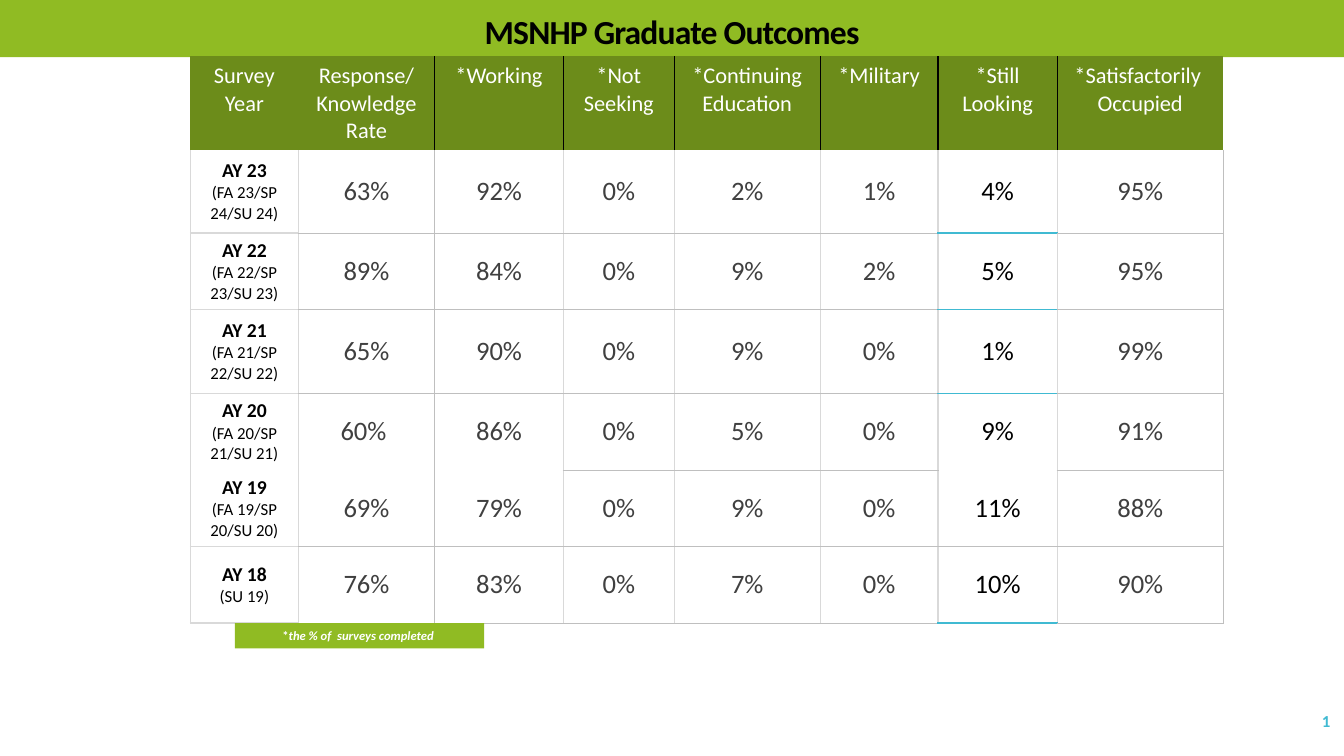
from lxml import etree
from pptx import Presentation
from pptx.dml.color import RGBColor
from pptx.enum.shapes import MSO_SHAPE
from pptx.enum.text import MSO_ANCHOR, PP_ALIGN
from pptx.oxml.ns import qn
from pptx.util import Cm, Pt

CENTER, RIGHT = PP_ALIGN.CENTER, PP_ALIGN.RIGHT
TOP, MIDDLE, BOTTOM = MSO_ANCHOR.TOP, MSO_ANCHOR.MIDDLE, MSO_ANCHOR.BOTTOM
RECTANGLE = MSO_SHAPE.RECTANGLE

TITLE = "MSNHP Graduate Outcomes"
HEADINGS = [
    ["Survey Year"],
    ["Response/", "Knowledge", "Rate"],
    ["*Working"],
    ["*Not Seeking"],
    ["*Continuing Education"],
    ["*Military"],
    ["*Still Looking"],
    ["*Satisfactorily ", "Occupied"],
]
OUTCOMES = [
    ("AY 23", "(FA 23/SP 24/SU 24)", ["63%", "92%", "0%", "2%", "1%", "4%", "95%"]),
    ("AY 22", "(FA 22/SP 23/SU 23)", ["89%", "84%", "0%", "9%", "2%", "5%", "95%"]),
    ("AY 21", "(FA 21/SP 22/SU 22)", ["65%", "90%", "0%", "9%", "0%", "1%", "99%"]),
    ("AY 20", "(FA 20/SP 21/SU 21)", ["60% ", "86%", "0%", "5%", "0%", "9%", "91%"]),
    ("AY 19", "(FA 19/SP 20/SU 20)", ["69%", "79%", "0%", "9%", "0%", "11%", "88%"]),
    ("AY 18", "(SU 19)", ["76%", "83%", "0%", "7%", "0%", "10%", "90%"]),
]
FOOTNOTE = ("*", "the % of  surveys completed ")
PAGE_NUMBER = "1"

THEME = {
    "font": "Calibri",
    "lime": "90BB23", "olive": "6C8C1A", "teal": "40BAD2",
    "white": "FFFFFF", "black": "000000", "ink": "404040",
    "line": "D9D9D9", "hairline": "BFBFBF",
    "title": 24, "heading": 16, "year": 14, "terms": 12,
    "rate": 19, "footnote": 9, "page": 12,
}

COLUMN_WIDTHS = [2.72, 3.43, 3.25, 2.79, 3.68, 2.97, 3.0, 4.19]
ROW_HEIGHTS = [2.36, 2.09, 1.93, 2.11, 1.93, 1.93, 1.93]
YEAR, RESPONSE, WORKING, LOOKING = 0, 1, 2, 6
LAST_COLUMN, LAST_ROW = len(HEADINGS) - 1, len(OUTCOMES)
OPEN_ROW = 4
OPEN_COLUMNS = (YEAR, RESPONSE, WORKING, LOOKING)
GRAY, HAIR, BLACK, TEAL = ("line", 1), ("hairline", 0.25), ("black", 1), ("teal", 1)
CELL_FORMAT = {
    "margin_left": Cm(0.3), "margin_right": Cm(0.3),
    "margin_top": Cm(0.15), "margin_bottom": Cm(0.15),
}


def color(role):
    return RGBColor.from_string(THEME[role])


def add_run(paragraph, text, size, role, bold=False, italic=False):
    run = paragraph.add_run()
    run.text = text
    run.font.color.rgb = color(role)
    values = {"name": THEME["font"], "size": Pt(THEME[size]), "bold": bold, "italic": italic}
    for key, value in values.items():
        setattr(run.font, key, value)
    return run


def write_lines(frame, lines, align=CENTER):
    for index, line in enumerate(lines):
        paragraph = frame.add_paragraph() if index else frame.paragraphs[0]
        paragraph.alignment = align
        add_run(paragraph, *line)


def add_bar(slide, left, top, width, height):
    bar = slide.shapes.add_shape(RECTANGLE, Cm(left), Cm(top), Cm(width), Cm(height))
    bar.shadow.inherit = False
    bar.fill.solid()
    bar.fill.fore_color.rgb = color("lime")
    bar.line.fill.background()
    bar.text_frame.word_wrap = True
    bar.text_frame.paragraphs[0].alignment = CENTER
    return bar.text_frame


def vertical_edge(row, edge):
    if row == 0:
        return BLACK if RESPONSE < edge <= LAST_COLUMN else None
    return HAIR if edge in (WORKING, LAST_COLUMN + 1) else GRAY


def horizontal_edge(edge, column):
    if edge < 2 or (edge == OPEN_ROW + 1 and column in OPEN_COLUMNS):
        return None
    if column == LOOKING:
        return HAIR if edge == LAST_ROW else TEAL
    return GRAY if column == YEAR else HAIR


def set_borders(cell, row, column):
    edges = {
        "a:lnL": vertical_edge(row, column),
        "a:lnR": vertical_edge(row, column + 1),
        "a:lnT": horizontal_edge(row, column),
        "a:lnB": horizontal_edge(row + 1, column),
    }
    properties = cell._tc.get_or_add_tcPr()
    for tag, edge in edges.items():
        border = etree.SubElement(properties, qn(tag))
        if edge is None:
            etree.SubElement(border, qn("a:noFill"))
            continue
        role, weight = edge
        border.set("w", str(int(Pt(weight))))
        solid = etree.SubElement(border, qn("a:solidFill"))
        etree.SubElement(solid, qn("a:srgbClr")).set("val", THEME[role])


def cell_lines(row, column):
    if row == 0:
        return [(text, "heading", "white") for text in HEADINGS[column]]
    year, terms, rates = OUTCOMES[row - 1]
    if column == YEAR:
        return [(year, "year", "black", True), (terms, "terms", "black")]
    return [(rates[column - 1], "rate", "black" if column == LOOKING else "ink")]


def add_outcomes(slide):
    frame = slide.shapes.add_table(
        len(ROW_HEIGHTS), len(COLUMN_WIDTHS), Cm(4.8), Cm(1.42),
        Cm(sum(COLUMN_WIDTHS)), Cm(sum(ROW_HEIGHTS)))
    table = frame.table
    table.horz_banding = False
    for column, width in enumerate(COLUMN_WIDTHS):
        table.columns[column].width = Cm(width)
    for row, height in enumerate(ROW_HEIGHTS):
        table.rows[row].height = Cm(height)
        for column in range(len(COLUMN_WIDTHS)):
            cell = table.cell(row, column)
            set_borders(cell, row, column)
            cell.fill.solid()
            cell.fill.fore_color.rgb = color("white" if row else "olive")
            cell.vertical_anchor = MIDDLE if row else TOP
            for key, value in CELL_FORMAT.items():
                setattr(cell, key, value)
            write_lines(cell.text_frame, cell_lines(row, column))


def main():
    deck = Presentation()
    deck.slide_width, deck.slide_height = Cm(33.87), Cm(19.05)
    slide = deck.slides.add_slide(deck.slide_layouts[6])

    page = slide.shapes.add_textbox(Cm(29.54), Cm(17.65), Cm(4.24), Cm(1.02)).text_frame
    page.word_wrap = True
    page.vertical_anchor = MIDDLE
    write_lines(page, [(PAGE_NUMBER, "page", "teal", True)], RIGHT)
    page.paragraphs[0].space_after = Pt(6)

    title = add_bar(slide, 0, 0, 33.87, 1.44)
    title.vertical_anchor = BOTTOM
    title.paragraphs[0].line_spacing = 0.9
    heading = add_run(title.paragraphs[0], TITLE, "title", "black", True)
    heading.font._element.set("spc", "-60")

    add_outcomes(slide)

    footnote = add_bar(slide, 5.92, 15.7, 6.28, 0.64)
    marker, note = FOOTNOTE
    add_run(footnote.paragraphs[0], marker, "footnote", "white", True)
    add_run(footnote.paragraphs[0], note, "footnote", "white", True, True)

    deck.save("out.pptx")


if __name__ == "__main__":
    main()
